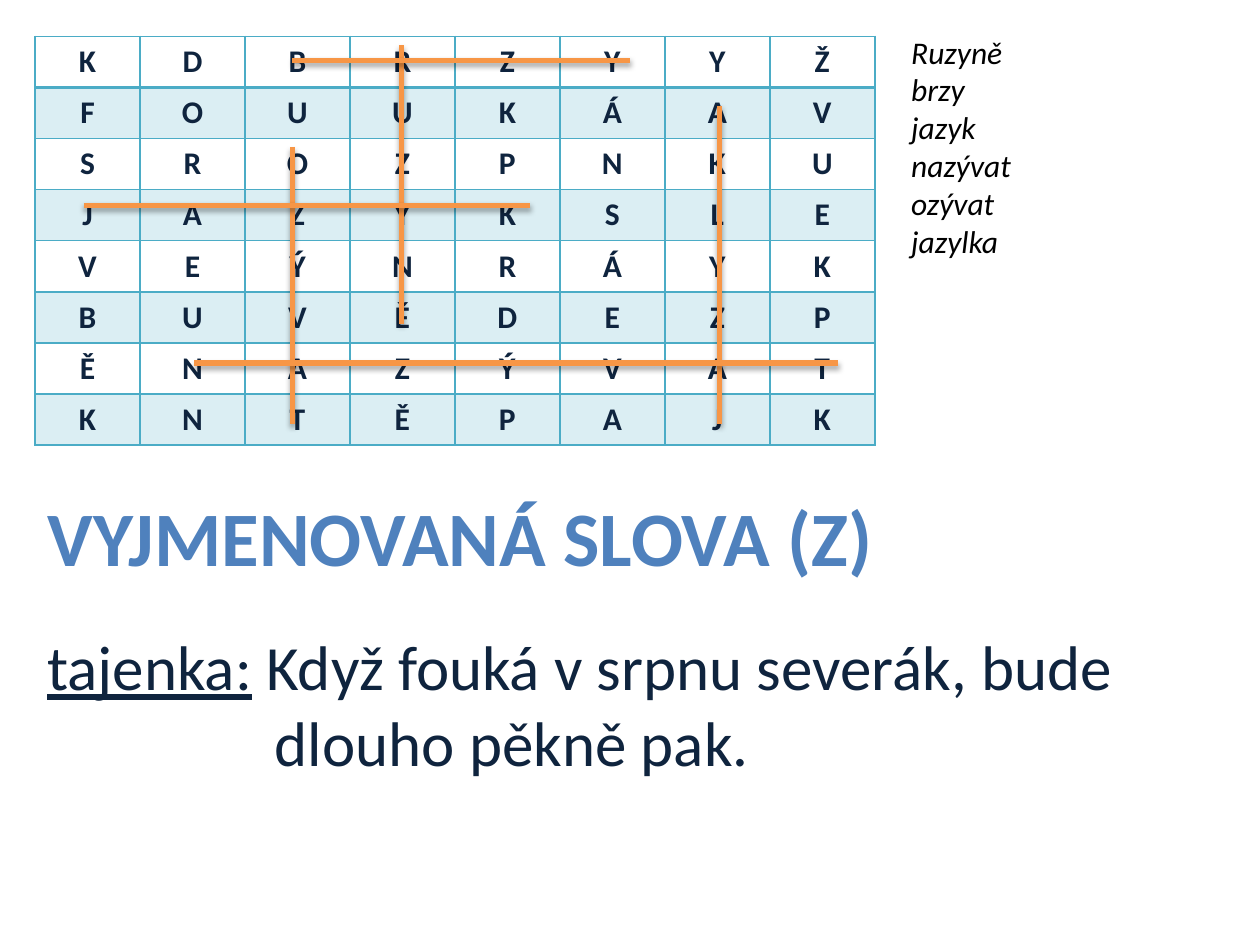
from lxml import etree
from pptx import Presentation
from pptx.dml.color import RGBColor
from pptx.enum.shapes import MSO_CONNECTOR as Conn
from pptx.enum.text import MSO_ANCHOR as Anchor, MSO_AUTO_SIZE as Fit, PP_ALIGN as Align
from pptx.oxml import parse_xml
from pptx.oxml.ns import nsdecls, qn
from pptx.util import Pt

NAVY, BLUE, TEAL, ORANGE = "0F243E", "4F81BD", "4BACC6", "F79646"


def rgb(code):
    return RGBColor.from_string(code)


def write(para, text, size=18, color=NAVY, align=Align.LEFT, bold=False,
          italic=False, underline=False):
    """Add a formatted run to a paragraph."""
    para.alignment = align
    font = (run := para.add_run()).font
    run.text = text
    font.name, font.size = "Calibri", Pt(size)
    font.bold, font.italic, font.underline = bold, italic, underline
    font.color.rgb = rgb(color)


prs = Presentation()
prs.slide_width, prs.slide_height = Pt(720), Pt(540)
slide = prs.slides.add_slide(prs.slide_layouts[1])
shapes = slide.shapes

# Heading, word list and solution
title, words = shapes.title, slide.placeholders[1]
answer = shapes.add_textbox(0, 0, 0, 0)
places = [(title, 20, 276, 680, 60.5), (words, 513.5, 15, 187, 138.5),
          (answer, 20, 355, 680, 94.5)]
for box, left, top, width, height in places:
    box.left, box.top, box.width, box.height = Pt(left), Pt(top), Pt(width), Pt(height)
    frame = box.text_frame
    frame.word_wrap = True
    frame.auto_size = Fit.SHAPE_TO_FIT_TEXT
    frame.vertical_anchor = Anchor.TOP

write(title.text_frame.paragraphs[0], "VYJMENOVANÁ SLOVA (Z)", size=44, color=BLUE, bold=True)

frame = words.text_frame
for i, word in enumerate(["Ruzyně", "brzy", "jazyk", "nazývat", "ozývat", "jazylka"]):
    para = frame.add_paragraph() if i else frame.paragraphs[0]
    props = para._p.get_or_add_pPr()
    props.set("marL", "0")
    props.set("indent", "0")
    etree.SubElement(props, qn("a:buNone"))
    para.space_before = Pt(0)
    write(para, word, color="000000", italic=True)

frame = answer.text_frame
write(frame.paragraphs[0], "tajenka:", size=36, underline=True)
write(frame.paragraphs[0], " Když fouká v srpnu severák, bude", size=36)
para = frame.add_paragraph()
para._p.get_or_add_pPr().set("marL", str(Pt(130)))
write(para, "dlouho pěkně pak.", size=36)

# Letter grid
letters = ["KDBRZYYŽ", "FOUUKÁAV", "SROZPNKU", "JAZYKSLE",
           "VEÝNRÁYK", "BUVĚDEZP", "ĚNAZÝVAT", "KNTĚPAJK"]
table = shapes.add_table(8, 8, Pt(20), Pt(20.75), Pt(480), Pt(233.6)).table
table.first_row = table.horz_banding = False
for col in table.columns:
    col.width = Pt(60)
for r, line in enumerate(letters):
    table.rows[r].height = Pt(29.2)
    for c, letter in enumerate(line):
        cell = table.cell(r, c)
        write(cell.text_frame.paragraphs[0], letter, align=Align.CENTER, bold=True)
        props = cell._tc.get_or_add_tcPr()
        for side in "LRTB":
            thick = (r, side) in [(0, "B"), (1, "T")]
            props.append(parse_xml(
                f'<a:ln{side} {nsdecls("a")} w="{Pt(2 if thick else 1)}"><a:solidFill>'
                f'<a:srgbClr val="{TEAL}"/></a:solidFill></a:ln{side}>'))
        if r % 2:
            cell.fill.solid()
            cell.fill.fore_color.rgb = rgb(TEAL)
            tint = props.find(qn("a:solidFill")).find(qn("a:srgbClr"))
            etree.SubElement(tint, qn("a:alpha")).set("val", "20000")
        else:
            cell.fill.background()

# Strokes through the found words
SHADOW = (f'<a:effectLst {nsdecls("a")}><a:outerShdw blurRad="{Pt(3.1)}" dist="{Pt(1.8)}" '
          'dir="5400000" rotWithShape="0"><a:srgbClr val="000000"><a:alpha val="35000"/>'
          '</a:srgbClr></a:outerShdw></a:effectLst>')
strokes = [(229.5, 26, 229.5, 185), (167, 34.5, 360, 34.5), (411, 60.5, 411, 242.5),
           (167, 84, 167, 242.5), (48, 117.5, 303, 117.5), (111, 207.5, 479, 207.5)]
for ends in strokes:
    stroke = shapes.add_connector(Conn.STRAIGHT, *map(Pt, ends))
    stroke.line.color.rgb = rgb(ORANGE)
    stroke.line.width = Pt(3)
    stroke._element.spPr.append(parse_xml(SHADOW))

prs.save("out.pptx")
